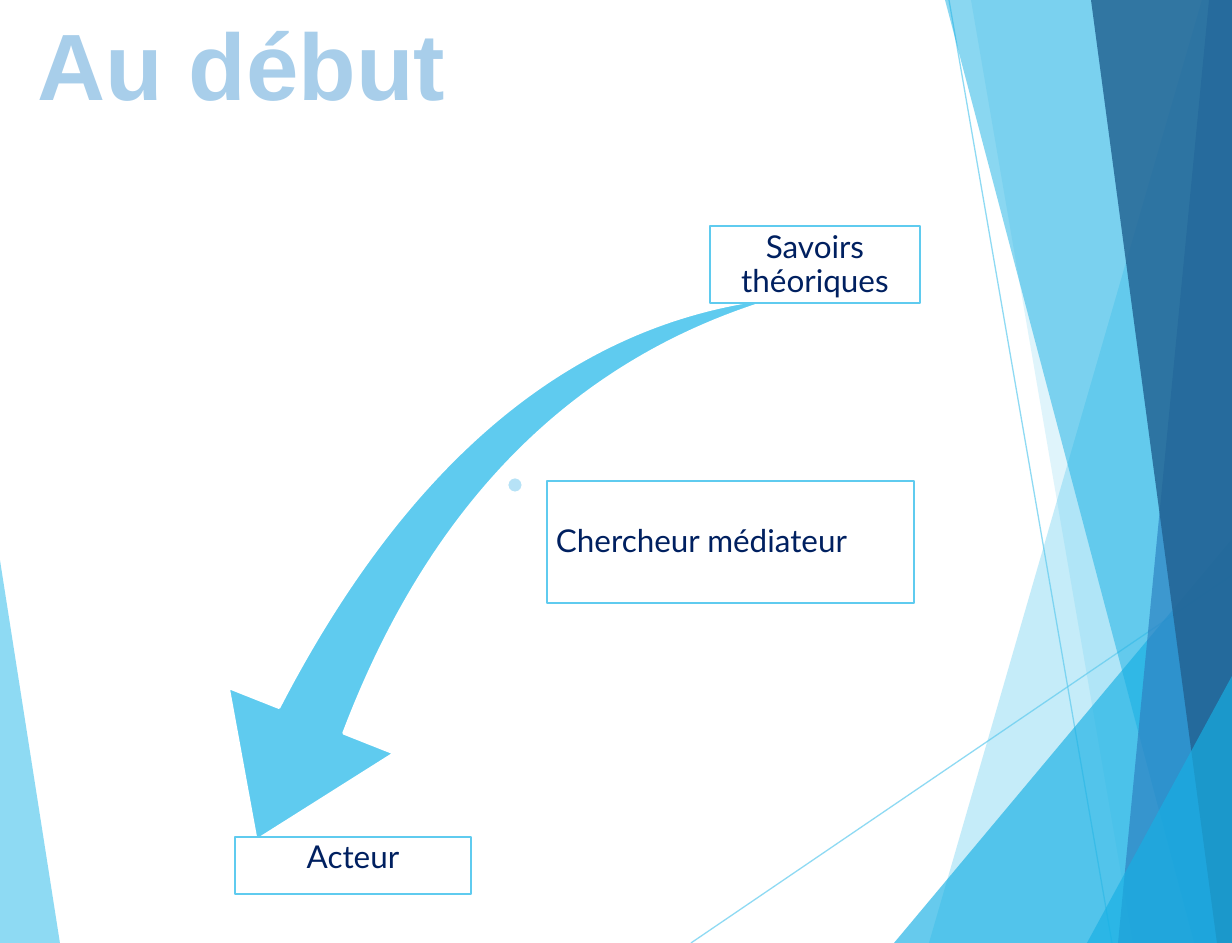
from dataclasses import dataclass

import pptx
import pptx.dml.color
import pptx.enum.shapes
import pptx.enum.text
import pptx.oxml
import pptx.oxml.ns
import pptx.util

PX = 7274  # EMU in one px
WIDTH, HEIGHT = 1232, 943

ALIGN = pptx.enum.text.PP_ALIGN
ANCHOR = pptx.enum.text.MSO_ANCHOR
SHAPE = pptx.enum.shapes.MSO_SHAPE


@dataclass(frozen=True)
class Theme:
    sky: str = "5FCBEF"
    cyan: str = "17B0E4"
    blue: str = "2E83C3"
    navy: str = "226292"
    pale: str = "B6E2F6"
    white: str = "FFFFFF"
    title: str = "A8CEEA"
    text: str = "002060"
    title_font: str = "Arial"
    text_font: str = "Lato"
    title_size: int = 54
    text_size: int = 18
    hairline: float = 0.75
    outline: float = 1.5


THEME = Theme()

# Points, colour and opacity in percent, from back to front
LEFT_FACET = ([(0, 560), (60, HEIGHT), (0, HEIGHT)], THEME.sky, 70)
RIGHT_FACETS = [
    ([(1202, 0), (929, HEIGHT), (WIDTH, HEIGHT), (WIDTH, 0)], THEME.sky, 36),
    ([(971, 0), (1133, HEIGHT), (WIDTH, HEIGHT), (WIDTH, 0)], THEME.sky, 20),
    ([(894, HEIGHT), (WIDTH, 539), (WIDTH, HEIGHT)], THEME.cyan, 66),
    ([(945, 0), (1194, HEIGHT), (WIDTH, HEIGHT), (WIDTH, 0)], THEME.cyan, 50),
    ([(1209, 0), (1118, HEIGHT), (WIDTH, HEIGHT), (WIDTH, 0)], THEME.blue, 70),
    ([(1091, 0), (1217, HEIGHT), (WIDTH, HEIGHT), (WIDTH, 0)], THEME.navy, 82),
    ([(1087, HEIGHT), (WIDTH, 676), (WIDTH, HEIGHT)], THEME.cyan, 66),
]
HAIRLINES = [(691, HEIGHT, WIDTH, 575), (949, 0, 1112, HEIGHT)]

LABELS = [
    ("Savoirs théoriques", (710, 226, 210, 77), ALIGN.CENTER, ANCHOR.BOTTOM),
    ("Chercheur médiateur", (547, 481, 367, 122), ALIGN.LEFT, ANCHOR.MIDDLE),
    ("Acteur", (235, 837, 236, 57), ALIGN.CENTER, ANCHOR.TOP),
]


def emu(*lengths):
    return [length * PX for length in lengths]


def rgb(color):
    return pptx.dml.color.RGBColor.from_string(color)


def set_opacity(fill_owner, percent):
    """Add an alpha value to the solid colour of a shape or line."""
    color = fill_owner.find(".//" + pptx.oxml.ns.qn("a:srgbClr"))
    alpha = pptx.oxml.parse_xml(
        f'<a:alpha {pptx.oxml.ns.nsdecls("a")} val="{percent * 1000}"/>')
    color.append(alpha)


def format_text(text_frame, text, font_name, size, color, align, bold=False):
    text_frame.text = text
    paragraph = text_frame.paragraphs[0]
    paragraph.alignment = align
    font = paragraph.runs[0].font
    font.name = font_name
    font.size = pptx.util.Pt(size)
    font.bold = bold
    font.color.rgb = rgb(color)
    return paragraph


def add_facet(slide, points, color, opacity):
    builder = slide.shapes.build_freeform(*points[0], scale=PX)
    builder.add_line_segments(points[1:], close=True)
    shape = builder.convert_to_shape()
    shape.shadow.inherit = False
    shape.fill.solid()
    shape.fill.fore_color.rgb = rgb(color)
    shape.line.fill.background()
    set_opacity(shape._element.spPr, opacity)


def add_hairline(slide, ends):
    connector = slide.shapes.add_connector(
        pptx.enum.shapes.MSO_CONNECTOR.STRAIGHT, *emu(*ends))
    connector.line.color.rgb = rgb(THEME.sky)
    connector.line.width = pptx.util.Pt(THEME.hairline)
    properties = connector._element.spPr
    set_opacity(properties, 70)
    properties.append(pptx.oxml.parse_xml(
        f'<a:effectLst {pptx.oxml.ns.nsdecls("a")}/>'))


def add_preset(slide, kind, box, fill, line):
    shape = slide.shapes.add_shape(kind, *emu(*box))
    shape.shadow.inherit = False
    shape.fill.solid()
    shape.fill.fore_color.rgb = rgb(fill)
    shape.line.color.rgb = rgb(line)
    shape.line.width = pptx.util.Pt(THEME.outline)
    return shape


def add_swoosh(slide, box):
    arrow = add_preset(slide, SHAPE.SWOOSH_ARROW, box, THEME.sky, THEME.white)
    arrow.adjustments[0] = 0.16
    arrow.adjustments[1] = 0.31
    arrow.rotation = 105.2
    arrow._element.spPr.xfrm.set("flipV", "1")


def add_label(slide, text, box, align, anchor):
    shape = add_preset(slide, SHAPE.RECTANGLE, box, THEME.white, THEME.sky)
    frame = shape.text_frame
    frame.word_wrap = True
    frame.vertical_anchor = anchor
    frame.margin_left = frame.margin_right = 9 * PX
    frame.margin_top = frame.margin_bottom = 4 * PX
    paragraph = format_text(frame, text, THEME.text_font, THEME.text_size,
                            THEME.text, align)
    paragraph.line_spacing = 0.9


def add_title(slide, text, box):
    frame = slide.shapes.add_textbox(*emu(*box)).text_frame
    frame.word_wrap = False
    frame.auto_size = pptx.enum.text.MSO_AUTO_SIZE.SHAPE_TO_FIT_TEXT
    format_text(frame, text, THEME.title_font, THEME.title_size,
                THEME.title, ALIGN.CENTER, bold=True)


def main():
    presentation = pptx.Presentation()
    presentation.slide_width, presentation.slide_height = emu(WIDTH, HEIGHT)
    slide = presentation.slides.add_slide(presentation.slide_layouts[6])

    # Facetted backdrop
    add_facet(slide, *LEFT_FACET)
    for ends in HAIRLINES:
        add_hairline(slide, ends)
    for facet in RIGHT_FACETS:
        add_facet(slide, *facet)

    # Arrow from theory to actor, with the mediator's dot beside it
    add_swoosh(slide, (156, 344, 662, 432))
    add_preset(slide, SHAPE.OVAL, (507, 477, 16, 16), THEME.pale, THEME.white)
    for label in LABELS:
        add_label(slide, *label)

    # Title
    add_title(slide, "Au début", (23, 0, 437, 127))

    presentation.save("out.pptx")


if __name__ == "__main__":
    main()
